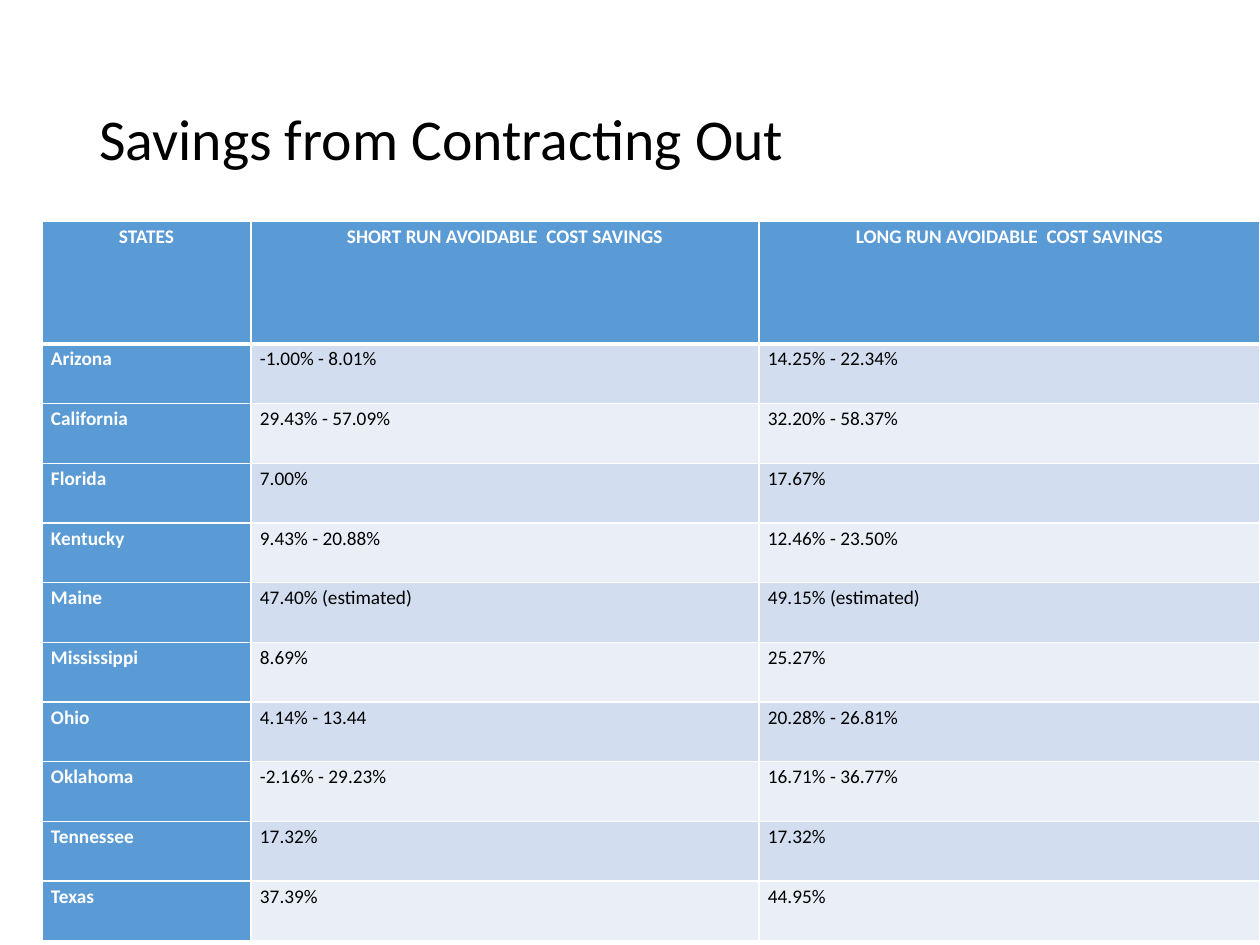
import dataclasses

import lxml.etree
import pptx
import pptx.dml.color
import pptx.enum.text
import pptx.oxml.ns
import pptx.util

SCALE = 914400 / 126  # EMU in one px


@dataclasses.dataclass(frozen=True)
class Theme:
    font: str = "Calibri"
    title: int = 33
    body: int = 11
    dark: str = "000000"
    light: str = "FFFFFF"
    head: str = "5B9BD5"
    bands: tuple = ("D2DEEF", "EAEFF7")
    thin: int = 1
    thick: int = 3


THEME = Theme()
HEADS = ("STATES", "SHORT RUN AVOIDABLE  COST SAVINGS",
         "LONG RUN AVOIDABLE  COST SAVINGS")
STATES = (
    ("Arizona", "-1.00% - 8.01%", "14.25% - 22.34%"),
    ("California", "29.43% - 57.09%", "32.20% - 58.37%"),
    ("Florida", "7.00%", "17.67%"),
    ("Kentucky", "9.43% - 20.88%", "12.46% - 23.50%"),
    ("Maine", "47.40% (estimated)", "49.15% (estimated)"),
    ("Mississippi", "8.69%", "25.27%"),
    ("Ohio", "4.14% - 13.44", "20.28% - 26.81%"),
    ("Oklahoma", "-2.16% - 29.23%", "16.71% - 36.77%"),
    ("Tennessee", "17.32%", "17.32%"),
    ("Texas", "37.39%", "44.95%"),
)
WIDTHS = (209, 508, 501)
HEAD_HIGH, BODY_HIGH = 123, 597


def px(count):
    return pptx.util.Emu(round(count * SCALE))


def color(code):
    return pptx.dml.color.RGBColor.from_string(code)


def style(para, size, code, bold=False):
    for run in para.runs:
        run.font.name = THEME.font
        run.font.size = pptx.util.Pt(size)
        run.font.bold = bold
        run.font.color.rgb = color(code)


def add_title(slide, text):
    box = slide.shapes.add_textbox(px(87), px(50), px(1086), px(183))
    frame = box.text_frame
    frame.word_wrap = True
    frame.vertical_anchor = pptx.enum.text.MSO_ANCHOR.MIDDLE
    frame.text = text
    para = frame.paragraphs[0]
    para.line_spacing = 0.9
    style(para, THEME.title, THEME.dark)


def add_edges(cell, top, bottom):
    """Draw the four cell borders; top and bottom widths are in points."""
    qn = pptx.oxml.ns.qn
    props = cell._tc.get_or_add_tcPr()
    edges = {"L": THEME.thin, "R": THEME.thin, "T": top, "B": bottom}
    for side, width in edges.items():
        line = lxml.etree.SubElement(props, qn(f"a:ln{side}"),
                                     w=str(pptx.util.Pt(width)))
        fill = lxml.etree.SubElement(line, qn("a:solidFill"))
        lxml.etree.SubElement(fill, qn("a:srgbClr"), val=THEME.light)


def fill_cell(cell, text, row, col):
    add_edges(cell, THEME.thick if row == 1 else THEME.thin,
              THEME.thick if row == 0 else THEME.thin)
    strong = row == 0 or col == 0
    cell.fill.solid()
    cell.fill.fore_color.rgb = color(
        THEME.head if strong else THEME.bands[(row - 1) % 2])
    cell.margin_left = cell.margin_right = px(9)
    cell.margin_top = cell.margin_bottom = 0
    cell.text_frame.text = text
    para = cell.text_frame.paragraphs[0]
    para.line_spacing = 1.15
    para.space_after = pptx.util.Pt(10)
    if row == 0:
        para.alignment = pptx.enum.text.PP_ALIGN.CENTER
    style(para, THEME.body, THEME.light if strong else THEME.dark, strong)


def add_grid(slide, rows):
    frame = slide.shapes.add_table(
        len(rows), len(WIDTHS), px(42), px(221),
        px(sum(WIDTHS)), px(HEAD_HIGH + BODY_HIGH))
    table = frame.table
    for col, width in zip(table.columns, WIDTHS):
        col.width = px(width)
    for row, texts in enumerate(rows):
        high = BODY_HIGH / (len(rows) - 1) if row else HEAD_HIGH
        table.rows[row].height = px(high)
        for col, text in enumerate(texts):
            fill_cell(table.cell(row, col), text, row, col)


def main():
    deck = pptx.Presentation()
    deck.slide_width, deck.slide_height = px(1260), px(945)
    slide = deck.slides.add_slide(deck.slide_layouts[6])
    add_title(slide, "Savings from Contracting Out")
    add_grid(slide, (HEADS, *STATES))
    deck.save("out.pptx")


if __name__ == "__main__":
    main()
